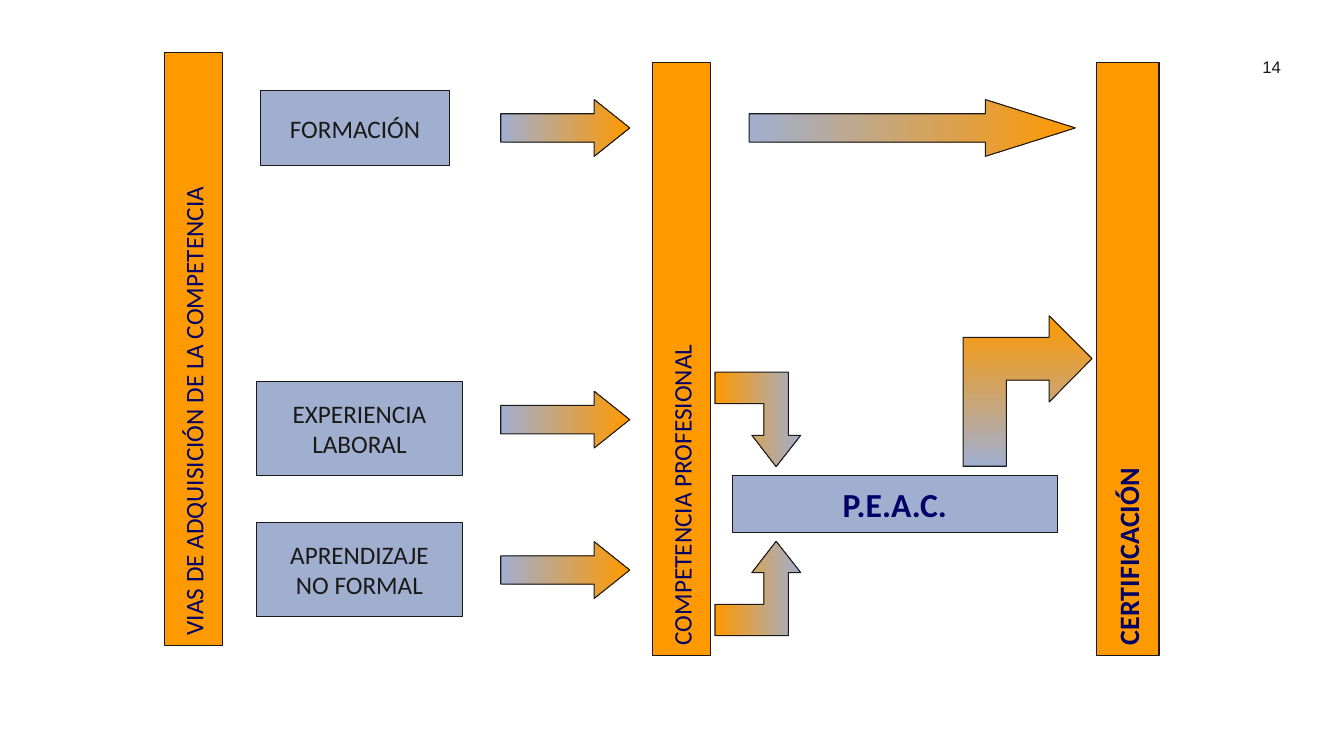
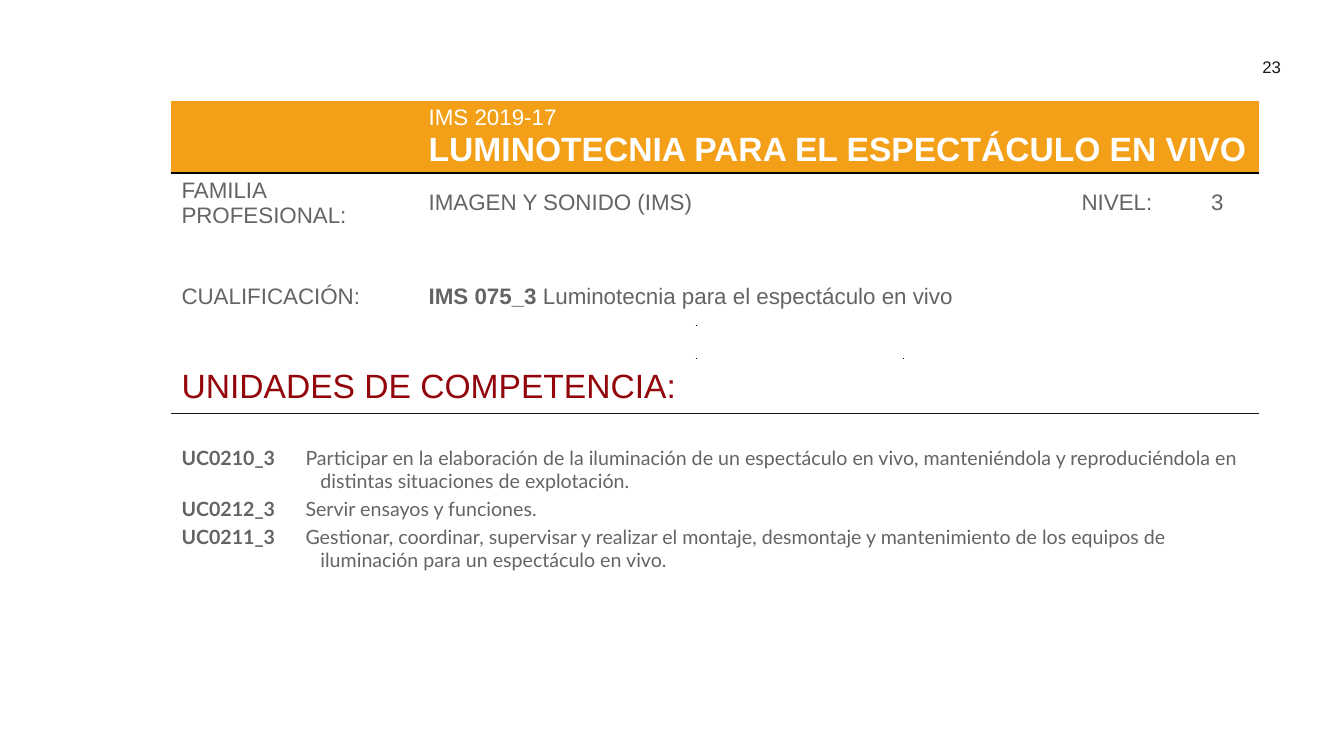
from lxml import etree
from pptx import Presentation
from pptx.dml.color import RGBColor
from pptx.enum.shapes import MSO_CONNECTOR, MSO_SHAPE
from pptx.enum.text import MSO_ANCHOR, PP_ALIGN
from pptx.oxml.ns import qn
from pptx.util import Cm, Pt

RECTANGLE, RIGHT_ARROW = MSO_SHAPE.RECTANGLE, MSO_SHAPE.RIGHT_ARROW
STRAIGHT = MSO_CONNECTOR.STRAIGHT
MIDDLE = MSO_ANCHOR.MIDDLE
LEFT, CENTER = PP_ALIGN.LEFT, PP_ALIGN.CENTER

INK = RGBColor(0x1A, 0x19, 0x18)
BLACK = RGBColor(0, 0, 0)
WHITE = RGBColor(0xFF, 0xFF, 0xFF)
ORANGE = RGBColor(0xFF, 0x99, 0x00)
BLUE = RGBColor(0xA0, 0xAF, 0xD0)
NAVY = RGBColor(0, 0, 0x66)
HEADER = RGBColor(0xF3, 0x9F, 0x17)
GRAY = RGBColor(0x64, 0x64, 0x64)
RED = RGBColor(0x92, 0x06, 0x0B)

NO_STYLE = "{2D5ABB26-0587-4C30-8999-92F81FD0307C}"

BARS = [
    ("VIAS DE ADQUISICIÓN DE LA COMPETENCIA", 4.14, 1.32, 1.47, 18, False),
    ("COMPETENCIA PROFESIONAL", 16.44, 1.57, 1.47, 18, False),
    ("CERTIFICACIÓN", 27.64, 1.57, 1.57, 20, True),
]
BAR_HEIGHT = 14.94
BOXES = [
    (["FORMACIÓN"], (6.56, 2.29, 4.78, 1.88), 18, INK, False),
    (["EXPERIENCIA", "LABORAL"], (6.46, 9.61, 5.2, 2.37), 18, INK, False),
    (["APRENDIZAJE", "NO FORMAL"], (6.46, 13.17, 5.2, 2.37), 18, INK, False),
    (["P.E.A.C."], (18.45, 11.98, 8.2, 1.44), 24, NAVY, True),
]
ARROWS = [
    (12.62, 2.51, 3.25, 0.625),
    (12.62, 9.86, 3.25, 0.625),
    (12.62, 13.65, 3.25, 0.625),
    (18.88, 2.51, 8.22, 1.585),
]
ARROW_HEIGHT = 1.43
MIRROR_AXIS = 12.7
ENTRY_ARROW = [
    (19.56, 11.76), (18.95, 10.97), (19.25, 10.97), (19.25, 10.17), (18.02, 10.17),
    (18.02, 9.38), (19.87, 9.38), (19.87, 10.97), (20.18, 10.97),
]
EXIT_ARROW = [
    (27.52, 9.04), (26.44, 10.13), (26.44, 9.58), (25.36, 9.58), (25.36, 11.75),
    (24.27, 11.75), (24.27, 8.5), (26.44, 8.5), (26.44, 7.96),
]

COLUMNS = [6.23, 16.14, 2.92, 2.13]
ROWS = [1.82, 1.51, 3.2, 1.35, 4.8]
CELL_MARGIN = Cm(0.06)
MERGES = [(0, 1), (2, 1), (3, 0), (4, 0)]
CELLS = [
    (0, 1, [("IMS 2019-17", 16, False), ("LUMINOTECNIA PARA EL ESPECTÁCULO EN VIVO", 24, True)], WHITE, LEFT),
    (1, 0, [("FAMILIA PROFESIONAL:", 16, False)], GRAY, LEFT),
    (1, 1, [("IMAGEN Y SONIDO (IMS)", 16, False)], GRAY, LEFT),
    (1, 2, [("NIVEL:", 16, False)], GRAY, CENTER),
    (1, 3, [("3", 16, False)], GRAY, CENTER),
    (2, 0, [("CUALIFICACIÓN:", 16, False)], GRAY, LEFT),
    (3, 0, [("UNIDADES DE COMPETENCIA:", 24, False)], RED, LEFT),
]
QUALIFICATION = ("IMS 075_3", " ", "Luminotecnia para el espectáculo en vivo")
UNITS = [
    ("UC0210_3", "Participar en la elaboración de la iluminación de un espectáculo en vivo, "
                 "manteniéndola y reproduciéndola en distintas situaciones de explotación."),
    ("UC0212_3", "Servir ensayos y funciones."),
    ("UC0211_3", "Gestionar, coordinar, supervisar y realizar el montaje, desmontaje y "
                 "mantenimiento de los equipos de iluminación para un espectáculo en vivo."),
]
UNIT_INDENT = Cm(3.5)
UNIT_GAP_SPACING = 1800
DOTS = [(17.53, 8.2), (17.53, 9.02), (22.76, 9.02)]
DOT_SIZE = 0.02


def set_font(paragraph, name, size, color, bold=False):
    font = paragraph.font
    font.name, font.size, font.bold = name, Pt(size), bold
    font.color.rgb = color


def next_paragraph(frame, index):
    return frame.add_paragraph() if index else frame.paragraphs[0]


def write_lines(frame, lines, name, size, color, bold=False, align=CENTER):
    frame.vertical_anchor = MIDDLE
    for index, line in enumerate(lines):
        paragraph = next_paragraph(frame, index)
        paragraph.text, paragraph.alignment = line, align
        set_font(paragraph, name, size, color, bold)


def outline(shape):
    shape.shadow.inherit = False
    shape.line.color.rgb = INK
    shape.line.width = Pt(0.75)


def fill_gradient(shape, start, end, angle=0):
    outline(shape)
    shape.fill.gradient()
    shape.fill.gradient_angle = angle
    for stop, color in zip(shape.fill.gradient_stops, (start, end)):
        stop.color.rgb = color


def add_rectangle(slide, place, color):
    shape = slide.shapes.add_shape(RECTANGLE, *map(Cm, place))
    outline(shape)
    shape.fill.solid()
    shape.fill.fore_color.rgb = color
    return shape


def add_bent_arrow(slide, points, start, end, angle=0):
    corners = [(Cm(x), Cm(y)) for x, y in points]
    builder = slide.shapes.build_freeform(*corners[0])
    builder.add_line_segments(corners[1:], close=True)
    fill_gradient(builder.convert_to_shape(), start, end, angle)


def add_numbered_slide(presentation, number):
    slide = presentation.slides.add_slide(presentation.slide_layouts[6])
    box = slide.shapes.add_textbox(Cm(31.3), Cm(1.4), Cm(1.5), Cm(0.56))
    frame = box.text_frame
    frame.word_wrap = True
    frame.margin_top = frame.margin_bottom = 0
    write_lines(frame, [str(number)], "Arial", 12, INK)
    return slide


def add_bottom_border(cell, color, width):
    line = etree.Element(qn("a:lnB"), w=str(Pt(width)))
    fill = etree.SubElement(line, qn("a:solidFill"))
    etree.SubElement(fill, qn("a:srgbClr"), val=str(color))
    cell._tc.get_or_add_tcPr().insert(0, line)


def add_bold_lead(paragraph, lead, gap, text):
    for part in (lead, gap, text):
        run = paragraph.add_run()
        run.text = part
        run.font.bold = part == lead


def build_pathways(presentation):
    slide = add_numbered_slide(presentation, 14)
    for text, left, top, width, size, bold in BARS:
        bar = add_rectangle(slide, (left, top, width, BAR_HEIGHT), ORANGE)
        bar.text_frame._txBody.bodyPr.set("vert", "vert270")
        write_lines(bar.text_frame, [text], "Calibri", size, NAVY, bold, LEFT)
    for lines, place, size, color, bold in BOXES:
        box = add_rectangle(slide, place, BLUE)
        write_lines(box.text_frame, lines, "Calibri", size, color, bold)
    for left, top, width, head in ARROWS:
        arrow = slide.shapes.add_shape(RIGHT_ARROW, Cm(left), Cm(top), Cm(width), Cm(ARROW_HEIGHT))
        arrow.adjustments[1] = head
        fill_gradient(arrow, BLUE, ORANGE)
    mirrored = [(x, 2 * MIRROR_AXIS - y) for x, y in ENTRY_ARROW]
    for points in (ENTRY_ARROW, mirrored):
        add_bent_arrow(slide, points, ORANGE, BLUE)
    add_bent_arrow(slide, EXIT_ARROW, BLUE, ORANGE, 90)


def write_units(frame):
    for index, (code, text) in enumerate(UNITS):
        paragraph = next_paragraph(frame, index)
        properties = paragraph._p.get_or_add_pPr()
        properties.set("marL", str(UNIT_INDENT))
        properties.set("indent", str(-UNIT_INDENT))
        if index:
            paragraph.space_before = Pt(3)
        add_bold_lead(paragraph, code, " ", text)
        gap = paragraph.runs[1]
        gap._r.get_or_add_rPr().set("spc", str(UNIT_GAP_SPACING))
        set_font(paragraph, "Lato", 14, GRAY)


def build_qualification(presentation):
    slide = add_numbered_slide(presentation, 23)
    for x, y in DOTS:
        dot = slide.shapes.add_connector(STRAIGHT, Cm(x), Cm(y), Cm(x + DOT_SIZE), Cm(y))
        dot.line.color.rgb = BLACK
        dot.line.width = Pt(0.5)
        etree.SubElement(dot._element.spPr, qn("a:effectLst"))
    table = slide.shapes.add_table(len(ROWS), len(COLUMNS), Cm(4.32), Cm(2.54),
                                   Cm(sum(COLUMNS)), Cm(sum(ROWS))).table
    table._tbl.tblPr.find(qn("a:tableStyleId")).text = NO_STYLE
    for column, width in zip(table.columns, COLUMNS):
        column.width = Cm(width)
    for row, height in zip(table.rows, ROWS):
        row.height = Cm(height)
    for row, column in MERGES:
        table.cell(row, column).merge(table.cell(row, len(COLUMNS) - 1))
    for cell in table.iter_cells():
        cell.fill.background()
        cell.vertical_anchor = MIDDLE
        cell.margin_top = cell.margin_bottom = CELL_MARGIN
    for column in range(len(COLUMNS)):
        header = table.cell(0, column)
        header.fill.solid()
        header.fill.fore_color.rgb = HEADER
        add_bottom_border(header, BLACK, 2.25)
        add_bottom_border(table.cell(3, column), INK, 1)
    for row, column, lines, color, align in CELLS:
        frame = table.cell(row, column).text_frame
        for index, (text, size, bold) in enumerate(lines):
            paragraph = next_paragraph(frame, index)
            paragraph.text, paragraph.alignment = text, align
            set_font(paragraph, "Arial", size, color, bold)
    paragraph = table.cell(2, 1).text_frame.paragraphs[0]
    add_bold_lead(paragraph, *QUALIFICATION)
    set_font(paragraph, "Arial", 16, GRAY)
    write_units(table.cell(4, 0).text_frame)


def main():
    presentation = Presentation()
    presentation.slide_width, presentation.slide_height = Cm(33.87), Cm(19.05)
    build_pathways(presentation)
    build_qualification(presentation)
    presentation.save("out.pptx")


if __name__ == "__main__":
    main()
